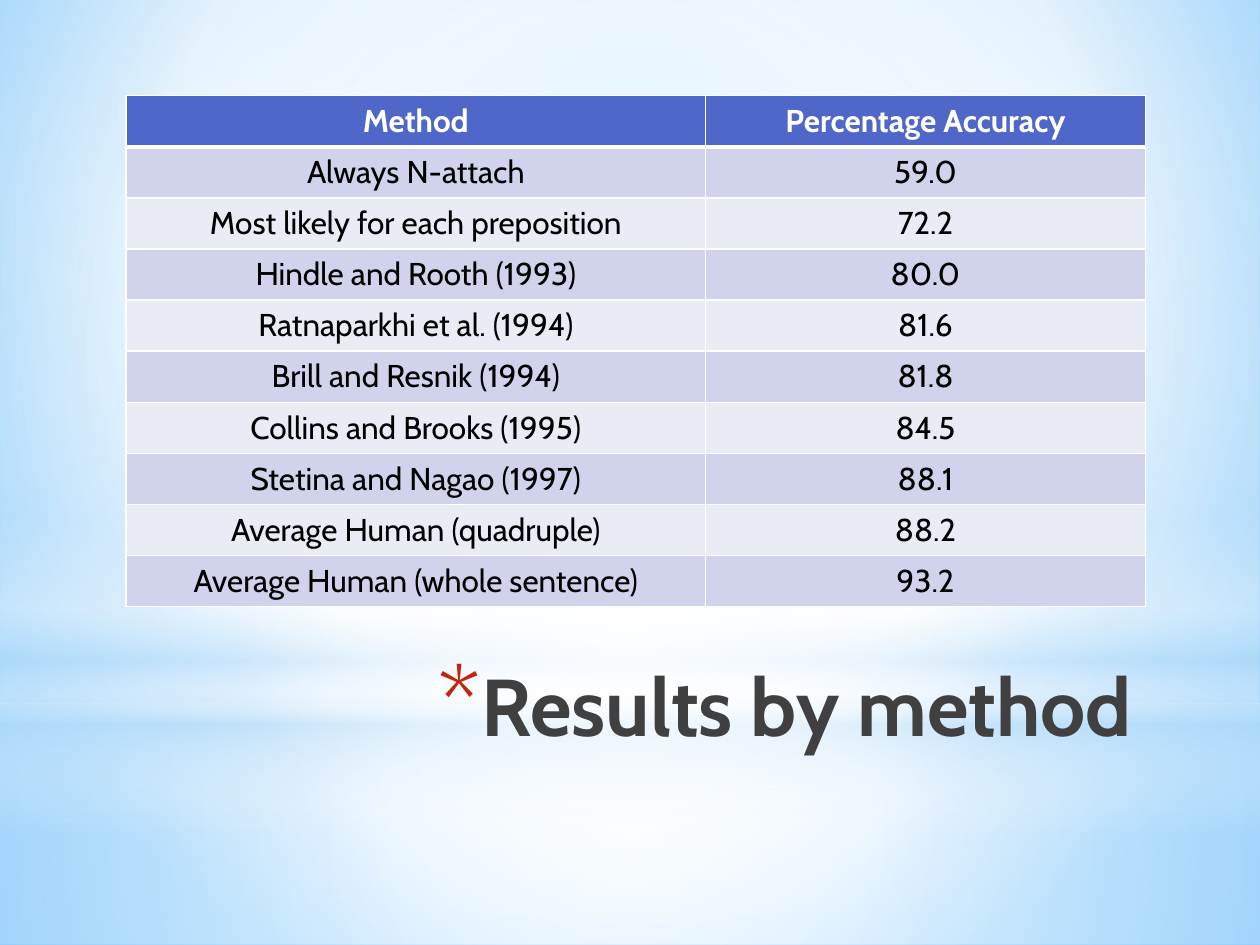
from lxml import etree
from pptx import Presentation
from pptx.dml.color import RGBColor
from pptx.enum import shapes, text
from pptx.oxml import ns
from pptx.util import Pt

FONT = "Cabin"
TITLE = "Results by method"
HEADER = ("Method", "Percentage Accuracy")
RESULTS = [
    ("Always N-attach", "59.0"),
    ("Most likely for each preposition", "72.2"),
    ("Hindle and Rooth (1993)", "80.0"),
    ("Ratnaparkhi et al. (1994)", "81.6"),
    ("Brill and Resnik (1994)", "81.8"),
    ("Collins and Brooks (1995)", "84.5"),
    ("Stetina and Nagao (1997)", "88.1"),
    ("Average Human (quadruple)", "88.2"),
    ("Average Human (whole sentence)", "93.2"),
]
COL_WIDTHS = (331.2, 251.3)
ROW_HEIGHT = 29.2
HEADER_FILL, BANDS = "4E67C8", ("D0D3EB", "E9EBF5")

# Gradient stops are (position %, colour, opacity %).
SKY = [(0, "9ED5FF", 100), (60, "FFFFFF", 100), (100, "5BB9FF", 100)]
CENTRE = (50, 50, 50, 50)
RECT, OVAL = shapes.MSO_SHAPE.RECTANGLE, shapes.MSO_SHAPE.OVAL
# Shape, top, height, stops, focus of a circular gradient (None: vertical)
GLOWS = [
    (RECT, 401.8, 138.2,
     [(0, "FFFFFF", 91), (37, "FFFFFF", 76), (100, "B4DCFA", 79)], CENTRE),
    (RECT, 0, 401.8,
     [(0, "FFFFFF", 89), (48, "FFFFFF", 62), (100, "B4DCFA", 79)], CENTRE),
    (RECT, 296.6, 180,
     [(0, "FFFFFF", 0), (29, "FFFFFF", 30), (45, "B4DCFA", 40),
      (55, "FFFFFF", 26), (65, "B4DCFA", 60), (100, "FFFFFF", 0)], None),
    (OVAL, 126, 401.8, [(0, "FFFFFF", 100), (56, "FFFFFF", 0)], CENTRE),
]


def rgb(value):
    return RGBColor.from_string(value)


def add(parent, tag, **attrs):
    """Append a DrawingML child element and return it."""
    return etree.SubElement(parent, ns.qn("a:" + tag),
                            {k: str(v) for k, v in attrs.items()})


def set_gradient(fill, owner, stops, focus):
    """Give owner's fill these stops, circular when it has a focus."""
    fill.gradient()
    grad = owner.find(".//" + ns.qn("a:gradFill"))
    for child in list(grad):
        grad.remove(child)
    stop_list = add(grad, "gsLst")
    for pos, color, opacity in stops:
        stop = add(stop_list, "gs", pos=pos * 1000)
        clr = add(stop, "srgbClr", val=color)
        if opacity < 100:
            add(clr, "alpha", val=opacity * 1000)
    if focus:
        circle = add(grad, "path", path="circle")
        add(circle, "fillToRect",
            **{side: v * 1000 for side, v in zip("ltrb", focus)})
    else:
        add(grad, "lin", ang=90 * 60000, scaled=0)


def add_run(p, content, size, color, bold):
    r = p.add_run()
    r.text = content
    r.font.name, r.font.size, r.font.bold = FONT, Pt(size), bold
    r.font.color.rgb = rgb(color)


def set_borders(cell, top, bottom):
    tc_pr = cell._tc.get_or_add_tcPr()
    for side, width in (("L", 1), ("R", 1), ("T", top), ("B", bottom)):
        line = add(tc_pr, "ln" + side, w=Pt(width))
        add(add(line, "solidFill"), "srgbClr", val="FFFFFF")


prs = Presentation()
prs.slide_width, prs.slide_height = Pt(720), Pt(540)
s = prs.slides.add_slide(prs.slide_layouts[5])
set_gradient(s.background.fill, s._element, SKY, (20, 10, 20, 60))

for kind, top, height, stops, focus in GLOWS:
    glow = s.shapes.add_shape(kind, 0, Pt(top), prs.slide_width, Pt(height))
    glow.shadow.inherit = False
    glow.line.fill.background()
    set_gradient(glow.fill, glow._element, stops, focus)

title = s.shapes.title
s.shapes._spTree.append(title._element)  # in front of the glows
title.left, title.top, title.width, title.height = map(
    Pt, (141.1, 371.5, 512.6, 90))
tf = title.text_frame
tf.word_wrap = True
tf.auto_size = text.MSO_AUTO_SIZE.NONE
tf.vertical_anchor = text.MSO_ANCHOR.TOP
p = tf.paragraphs[0]
p.alignment = text.PP_ALIGN.RIGHT
add_run(p, TITLE, 46, "404040", True)
p_pr = p._p.get_or_add_pPr()
p_pr.set("marL", str(Pt(25.2)))
p_pr.set("indent", str(Pt(-25.2)))
add(add(p_pr, "buClr"), "srgbClr", val="C3260C")
add(p_pr, "buSzPct", val=128000)
add(p_pr, "buFont", typeface=FONT)
add(p_pr, "buChar", char="*")

rows = [HEADER] + RESULTS
table = s.shapes.add_table(len(rows), len(HEADER), Pt(72), Pt(54.7),
                           Pt(sum(COL_WIDTHS)),
                           Pt(ROW_HEIGHT * len(rows))).table
for column, width in zip(table.columns, COL_WIDTHS):
    column.width = Pt(width)
for i, row in enumerate(rows):
    table.rows[i].height = Pt(ROW_HEIGHT)
    is_header = i == 0
    for j, content in enumerate(row):
        cell = table.cell(i, j)
        set_borders(cell, 3 if i == 1 else 1, 3 if is_header else 1)
        cell.fill.solid()
        cell.fill.fore_color.rgb = rgb(
            HEADER_FILL if is_header else BANDS[(i - 1) % 2])
        p = cell.text_frame.paragraphs[0]
        p.alignment = text.PP_ALIGN.CENTER
        add_run(p, content, 18, "FFFFFF" if is_header else "000000", is_header)

prs.save("out.pptx")
